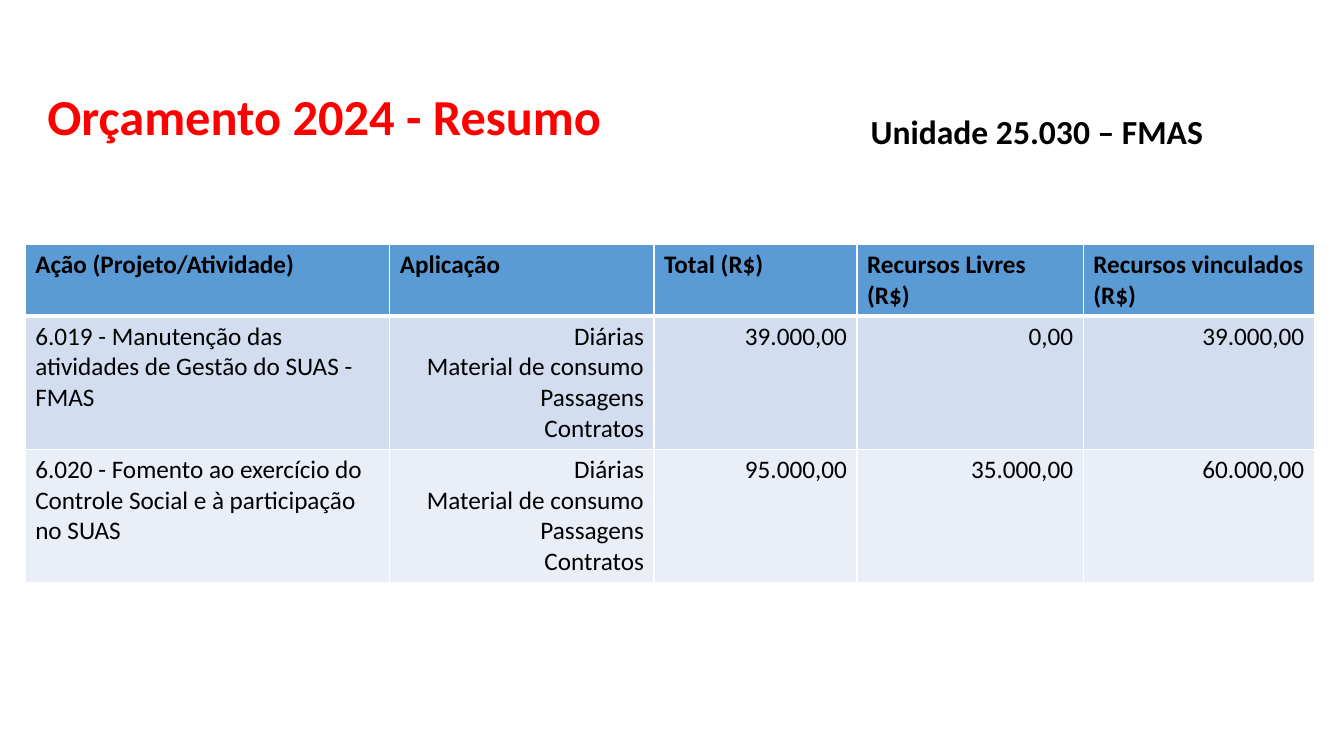
from dataclasses import dataclass

from lxml.etree import SubElement
from pptx import Presentation
from pptx.dml.color import RGBColor
from pptx.enum.text import MSO_ANCHOR, MSO_AUTO_SIZE, PP_ALIGN
from pptx.oxml.ns import qn
from pptx.util import Pt


@dataclass(frozen=True)
class Theme:
    font: str = "Calibri"
    title_size: int = 36
    unit_size: int = 24
    table_size: int = 18
    title: str = "FF0000"
    text: str = "000000"
    border: str = "FFFFFF"
    header: str = "5B9BD5"
    bands: tuple = ("D2DEEF", "EAEFF7")


THEME = Theme()
COLUMN_WIDTHS = (260.4, 188.8, 145, 161.6, 165.2)
HEADER_HEIGHT, BODY_HEIGHT = 51, 95
HEADINGS = ("Ação (Projeto/Atividade)", "Aplicação", "Total (R$)",
            "Recursos Livres (R$)", "Recursos vinculados (R$)")
APPLICATIONS = "Diárias\nMaterial de consumo\nPassagens\nContratos"
ACTIONS = (
    ("6.019 - Manutenção das atividades de Gestão do SUAS - FMAS",
     APPLICATIONS, "39.000,00", "0,00", "39.000,00"),
    ("6.020 - Fomento ao exercício do Controle Social e à participação no SUAS",
     APPLICATIONS, "95.000,00", "35.000,00", "60.000,00"),
)


def write(tf, text, size, color, bold=False, align=PP_ALIGN.LEFT):
    tf.text = text
    for p in tf.paragraphs:
        p.alignment = align
        for r in p.runs:
            r.font.name = THEME.font
            r.font.size = Pt(size)
            r.font.bold = bold
            r.font.color.rgb = RGBColor.from_string(color)


def set_borders(cell, top, bottom):
    """Draw white cell edges; top and bottom are widths in points."""
    tc_pr = cell._tc.get_or_add_tcPr()
    edges = (("a:lnL", 1), ("a:lnR", 1), ("a:lnT", top), ("a:lnB", bottom))
    for tag, width in edges:
        line = SubElement(tc_pr, qn(tag), w=str(Pt(width)))
        fill = SubElement(line, qn("a:solidFill"))
        SubElement(fill, qn("a:srgbClr"), val=THEME.border)


def add_title(s, left, top, width, height):
    sp = s.shapes.title
    sp.left, sp.top, sp.width, sp.height = map(Pt, (left, top, width, height))
    tf = sp.text_frame
    tf.vertical_anchor = MSO_ANCHOR.MIDDLE
    write(tf, "Orçamento 2024 - Resumo", THEME.title_size, THEME.title, bold=True)
    tf.paragraphs[0].line_spacing = 0.9


def add_unit(s, left, top, width, height):
    sp = s.shapes.add_textbox(*map(Pt, (left, top, width, height)))
    tf = sp.text_frame
    tf.word_wrap = False
    tf.auto_size = MSO_AUTO_SIZE.SHAPE_TO_FIT_TEXT
    write(tf, "Unidade 25.030 – FMAS", THEME.unit_size, THEME.text, bold=True)


def add_budget_table(s, left, top):
    rows = (HEADINGS, *ACTIONS)
    heights = (HEADER_HEIGHT, *[BODY_HEIGHT] * len(ACTIONS))
    box = (left, top, sum(COLUMN_WIDTHS), sum(heights))
    table = s.shapes.add_table(len(rows), len(HEADINGS), *map(Pt, box)).table
    for column, width in zip(table.columns, COLUMN_WIDTHS):
        column.width = Pt(width)
    for i, values in enumerate(rows):
        is_header = i == 0
        table.rows[i].height = Pt(heights[i])
        color = THEME.header if is_header else THEME.bands[(i - 1) % 2]
        for j, value in enumerate(values):
            cell = table.cell(i, j)
            align = PP_ALIGN.LEFT if is_header or j == 0 else PP_ALIGN.RIGHT
            write(cell.text_frame, value, THEME.table_size, THEME.text,
                  bold=is_header, align=align)
            set_borders(cell, top=3 if i == 1 else 1, bottom=3 if is_header else 1)
            cell.fill.solid()
            cell.fill.fore_color.rgb = RGBColor.from_string(color)


def main():
    prs = Presentation()
    prs.slide_width, prs.slide_height = Pt(960), Pt(540)
    s = prs.slides.add_slide(prs.slide_layouts[5])
    add_title(s, 26.6, 33.1, 828.7, 104.4)
    add_budget_table(s, 18, 174.6)
    add_unit(s, 614.9, 75.6, 254.2, 36)
    prs.save("out.pptx")


if __name__ == "__main__":
    main()
